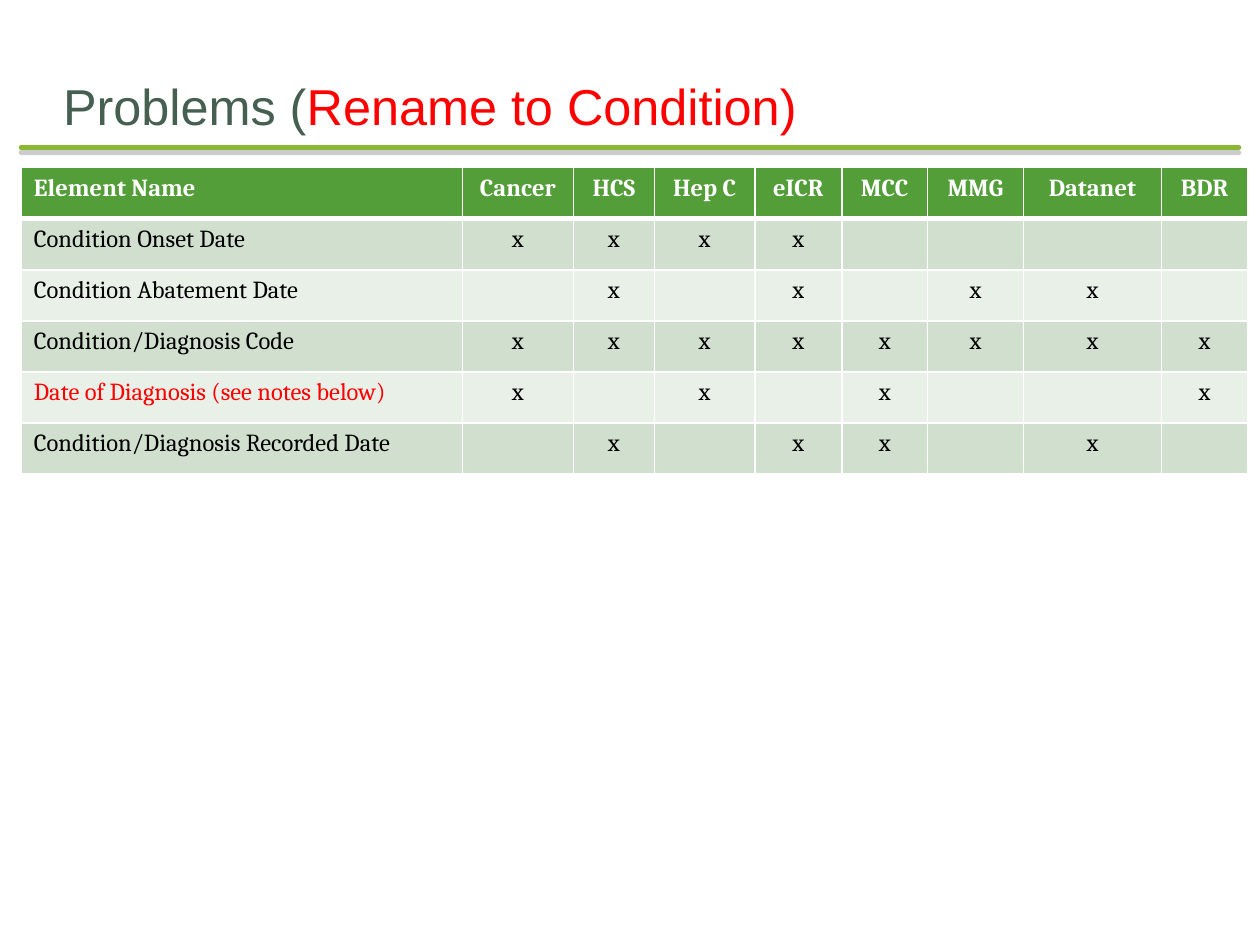
from lxml.etree import SubElement
from pptx import Presentation
from pptx.dml.color import RGBColor
from pptx.enum.shapes import MSO_CONNECTOR
from pptx.enum.text import MSO_ANCHOR, MSO_AUTO_SIZE, PP_ALIGN
from pptx.oxml import parse_xml
from pptx.oxml.ns import nsdecls, qn
from pptx.util import Cm, Pt

THEME = {
    "title_font": "Arial", "title_size": 28.8, "title": "455F51",
    "table_font": "Cambria", "table_size": 14,
    "alert": "FF0000", "text": "000000", "white": "FFFFFF",
    "rule": "8AB833", "shadow": "808080",
    "header": "549E39", "bands": ("D1DFCE", "E9F0E8"),
}

TITLE = [("Problems (", "title"), ("Rename to Condition)", "alert")]

# Column heading and width in cm
COLUMNS = [
    ("Element Name", 8.89), ("Cancer", 2.24), ("HCS", 1.63), ("Hep C", 2.03),
    ("eICR", 1.75), ("MCC", 1.73), ("MMG", 1.93), ("Datanet", 2.79), ("BDR", 1.73),
]
# Element, text colour, columns that contain it
ELEMENTS = [
    ("Condition Onset Date", "text", "Cancer, HCS, Hep C, eICR"),
    ("Condition Abatement Date", "text", "HCS, eICR, MMG, Datanet"),
    ("Condition/Diagnosis Code", "text",
     "Cancer, HCS, Hep C, eICR, MCC, MMG, Datanet, BDR"),
    ("Date of Diagnosis (see notes below)", "alert", "Cancer, Hep C, MCC, BDR"),
    ("Condition/Diagnosis Recorded Date", "text", "HCS, eICR, MCC, Datanet"),
]
ROW_HEIGHT = 1.03


def rgb(name):
    return RGBColor.from_string(THEME.get(name, name))


def format_run(r, font, size, color, bold=False):
    r.font.name, r.font.size, r.font.bold = font, Pt(size), bold
    r.font.color.rgb = rgb(color)


def set_borders(cell, top, bottom):
    """Draw white cell borders; top and bottom are widths in points."""
    tcPr = cell._tc.get_or_add_tcPr()
    for side, width in (("L", 1), ("R", 1), ("T", top), ("B", bottom)):
        ln = SubElement(tcPr, qn(f"a:ln{side}"), w=str(Pt(width)))
        fill = SubElement(ln, qn("a:solidFill"))
        SubElement(fill, qn("a:srgbClr"), val=THEME["white"])


def add_title(slide):
    s = slide.shapes.title
    s.left, s.top, s.width, s.height = Cm(1.27), Cm(1.27), Cm(22.86), Cm(1.47)
    tf = s.text_frame
    tf.auto_size, tf.word_wrap = MSO_AUTO_SIZE.NONE, True
    tf.vertical_anchor = MSO_ANCHOR.BOTTOM
    tf.margin_left = tf.margin_right = tf.margin_bottom = 0
    tf.margin_top = Cm(0.13)
    p = tf.paragraphs[0]
    p.alignment = PP_ALIGN.LEFT
    for text, color in TITLE:
        r = p.add_run()
        r.text = text
        format_run(r, THEME["title_font"], THEME["title_size"], color)


def add_rule(slide):
    """Add the round-ended line under the title, with its hard shadow."""
    s = slide.shapes.add_connector(
        MSO_CONNECTOR.STRAIGHT, Cm(0.43), Cm(2.97), Cm(24.97), Cm(2.97))
    s.line.color.rgb, s.line.width = rgb("rule"), Pt(3)
    s.line._get_or_add_ln().set("cap", "rnd")
    s._element.spPr.append(parse_xml(
        f'<a:effectLst {nsdecls("a")}>'
        f'<a:outerShdw blurRad="0" dist="{Pt(3)}" dir="5400000">'
        f'<a:srgbClr val="{THEME["shadow"]}"><a:alpha val="40000"/></a:srgbClr>'
        '</a:outerShdw></a:effectLst>'))


def add_matrix(slide):
    names = [name for name, _ in COLUMNS]
    rows = [(names, "white", "header")]
    for i, (element, color, members) in enumerate(ELEMENTS):
        present = members.split(", ")
        marks = ["x" if name in present else "" for name in names[1:]]
        rows.append(([element] + marks, color, THEME["bands"][i % 2]))

    width = sum(w for _, w in COLUMNS)
    table = slide.shapes.add_table(
        len(rows), len(COLUMNS), Cm(0.43), Cm(3.38),
        Cm(width), Cm(ROW_HEIGHT * len(rows))).table
    for column, (_, w) in zip(table.columns, COLUMNS):
        column.width = Cm(w)

    for i, (texts, color, fill) in enumerate(rows):
        table.rows[i].height = Cm(ROW_HEIGHT)
        for j, text in enumerate(texts):
            cell = table.cell(i, j)
            set_borders(cell, 3 if i == 1 else 1, 3 if i == 0 else 1)
            cell.fill.solid()
            cell.fill.fore_color.rgb = rgb(fill)
            if not text:
                continue
            p = cell.text_frame.paragraphs[0]
            p.text = text
            p.alignment = PP_ALIGN.CENTER if j else PP_ALIGN.LEFT
            format_run(p.runs[0], THEME["table_font"], THEME["table_size"],
                       "text" if i and j else color, bold=i == 0)


def main():
    prs = Presentation()
    prs.slide_width, prs.slide_height = Cm(25.4), Cm(19.05)
    slide = prs.slides.add_slide(prs.slide_layouts[5])
    add_title(slide)
    add_rule(slide)
    add_matrix(slide)
    prs.save("out.pptx")


if __name__ == "__main__":
    main()
